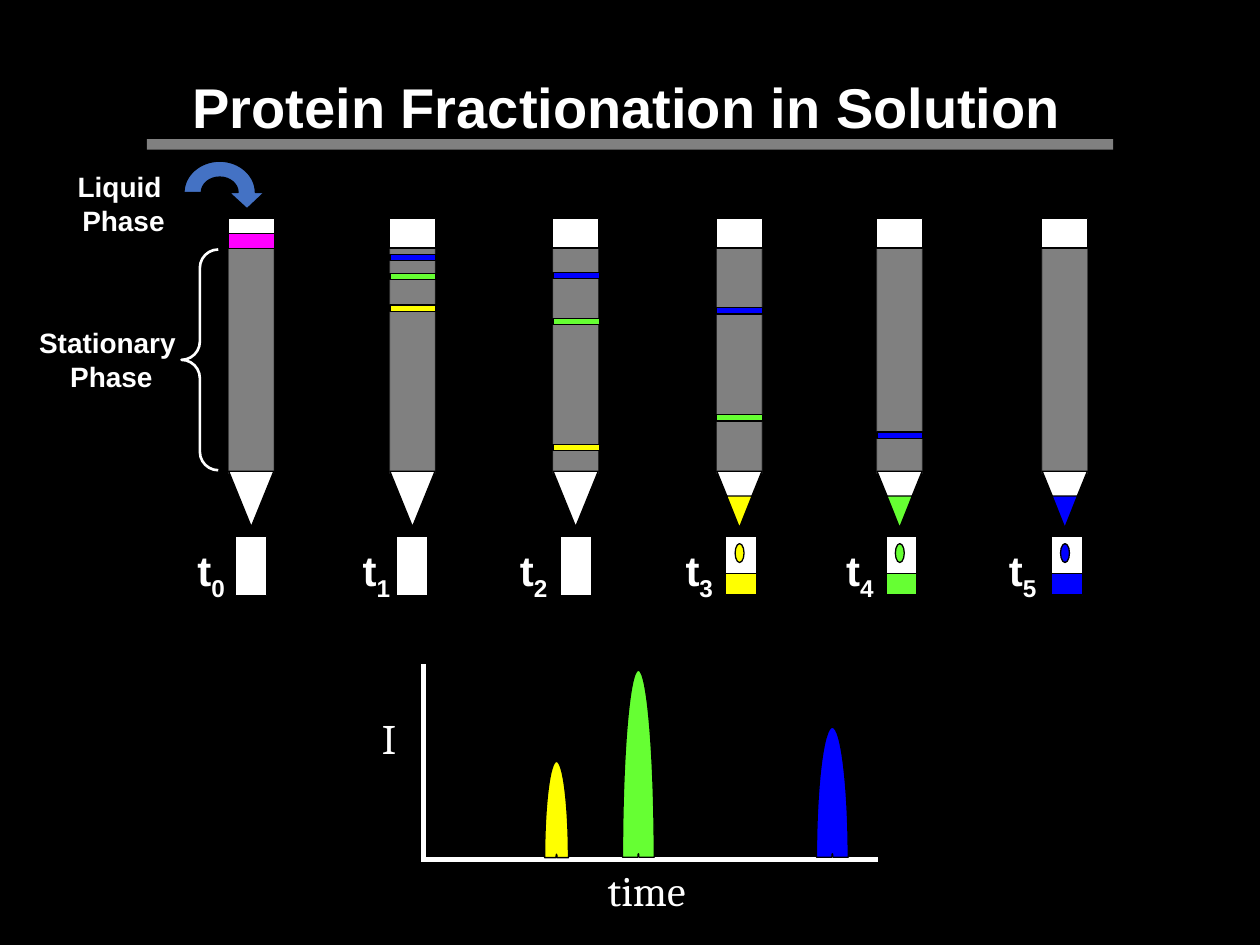
from lxml import etree
from pptx import Presentation
from pptx.dml.color import RGBColor
from pptx.enum.shapes import MSO_CONNECTOR, MSO_SHAPE
from pptx.enum.text import MSO_ANCHOR, MSO_AUTO_SIZE, PP_ALIGN
from pptx.oxml.ns import qn
from pptx.util import Cm, Pt

RECTANGLE = MSO_SHAPE.RECTANGLE
TRIANGLE = MSO_SHAPE.ISOSCELES_TRIANGLE
ELLIPSE = MSO_SHAPE.OVAL
BRACE = MSO_SHAPE.LEFT_BRACE
STRAIGHT = MSO_CONNECTOR.STRAIGHT
LEFT, CENTER = PP_ALIGN.LEFT, PP_ALIGN.CENTER

WHITE, BLACK, MAGENTA = "FFFFFF", "000000", "FF00FF"
YELLOW, GREEN, BLUE, ARROW_BLUE = "FFFF00", "66FF33", "0000FF", "4472C4"

TITLE_FONT = {"name": "Arial", "size": Pt(32), "bold": True}
PHASE_FONT = {"name": "Arial", "size": Pt(16), "bold": True}
TIME_FONT = {"name": "Arial", "size": Pt(24), "bold": True}
AXIS_FONT = {"name": "Cambria", "size": Pt(24), "bold": False}
FRAME_FORMAT = {
    "word_wrap": False,
    "auto_size": MSO_AUTO_SIZE.SHAPE_TO_FIT_TEXT,
    "vertical_anchor": MSO_ANCHOR.TOP,
    "margin_left": Cm(0.25),
    "margin_right": Cm(0.25),
    "margin_top": Cm(0.13),
    "margin_bottom": Cm(0.13),
}

CURVE_RATIO = 0.55
COLUMN_WIDTH = 0.93
BAND_HEIGHT = 0.13
COLUMNS = [
    (4.6, 3.73, [], None),
    (7.85, 7.06, [(5.13, BLUE), (5.51, GREEN), (6.15, YELLOW)], None),
    (11.14, 10.23, [(5.49, BLUE), (6.42, GREEN), (8.96, YELLOW)], None),
    (14.44, 13.57, [(6.2, BLUE), (8.36, GREEN)], YELLOW),
    (17.67, 16.81, [(8.71, BLUE)], GREEN),
    (21, 20.09, [], BLUE),
]
PEAKS = [
    (10.98, 15.35, 0.48, 17.29, YELLOW),
    (12.55, 13.51, 0.64, 17.28, GREEN),
    (16.46, 14.66, 0.64, 17.28, BLUE),
]


def set_format(target, values):
    for name, value in values.items():
        setattr(target, name, value)


def paint(fill, color, alpha=None):
    fill.solid()
    fill.fore_color.rgb = RGBColor.from_string(color)
    if alpha is not None:
        for node in fill._xPr.iter(qn("a:srgbClr")):
            etree.SubElement(node, qn("a:alpha")).set("val", str(alpha * 1000))


def outline(shape, color=BLACK, width=0.75):
    shape.shadow.inherit = False
    paint(shape.line.fill, color)
    shape.line.width = Pt(width)


def add_block(slide, kind, box, color, alpha=None):
    shape = slide.shapes.add_shape(kind, *map(Cm, box))
    outline(shape)
    paint(shape.fill, color, alpha)
    return shape


def add_cone(slide, box, color):
    add_block(slide, TRIANGLE, box, color).rotation = 180


def add_outline(slide, start, segments, size, color):
    points = [(Cm(x), Cm(y)) for segment in segments for x, y in segment]
    builder = slide.shapes.build_freeform(*map(Cm, start))
    builder.add_line_segments(points, close=True)
    shape = builder.convert_to_shape()
    outline(shape)
    paint(shape.fill, color)
    shape.width, shape.height = map(Cm, size)
    outline_path = next(shape._element.iter(qn("a:path")))
    outline_path.set("w", str(shape.width))
    outline_path.set("h", str(shape.height))
    nodes = iter(outline_path.findall(qn("a:lnTo")))
    for segment in segments:
        group = [next(nodes) for _ in segment]
        if len(group) == 3:
            curve = etree.SubElement(outline_path, qn("a:cubicBezTo"))
            group[0].addprevious(curve)
            for node in group:
                curve.append(node[0])
                outline_path.remove(node)


def half_ellipse(center, base, radius_x, radius_y, side):
    start, end = center + side * radius_x, center - side * radius_x
    top, handle_y = base - radius_y, base - CURVE_RATIO * radius_y
    handle_x = side * CURVE_RATIO * radius_x
    return [
        [(start, handle_y), (center + handle_x, top), (center, top)],
        [(center - handle_x, top), (end, handle_y), (end, base)],
    ]


def add_peak(slide, left, top, width, base, color):
    radius, height = width / 2, base - top
    center = left + radius
    segments = half_ellipse(center, base, 0.01, 0.07, -1)
    segments += [[(left + width, base)]]
    segments += half_ellipse(center, base, radius, height, 1)
    add_outline(slide, (center - 0.01, base), segments, (width, 2 * height), color)


def add_flow_arrow(slide):
    center, base = 4.43, 3.88
    segments = half_ellipse(center, base, 0.37, 0.31, 1)
    segments += [[(3.71, base)]]
    segments += half_ellipse(center, base, 0.72, 0.63, -1)
    segments += [[(5.33, base)], [(4.98, 4.21)], [(4.62, base)]]
    add_outline(slide, (center + 0.37, base), segments, (1.45, 1.27), ARROW_BLUE)


def add_line(slide, start, end, width, alpha=None):
    line = slide.shapes.add_connector(STRAIGHT, *map(Cm, (*start, *end)))
    paint(line.line.fill, WHITE, alpha)
    line.line.width = Pt(width)
    etree.SubElement(line._element.spPr, qn("a:effectLst"))


def add_run(paragraph, text, font):
    run = paragraph.add_run()
    run.text = text
    set_format(run.font, font)
    paint(run.font.fill, WHITE)
    return run


def write_lines(shape, lines, font, alignment):
    frame = shape.text_frame
    set_format(frame, FRAME_FORMAT)
    for index, text in enumerate(lines):
        paragraph = frame.add_paragraph() if index else frame.paragraphs[0]
        paragraph.alignment = alignment
        add_run(paragraph, text, font)
    return paragraph


def add_text(slide, box, lines, font, alignment=LEFT):
    shape = slide.shapes.add_textbox(*map(Cm, box))
    return write_lines(shape, lines, font, alignment)


def add_title(slide, box, text):
    title = slide.shapes.title
    set_format(title, dict(zip(("left", "top", "width", "height"), map(Cm, box))))
    write_lines(title, [text], TITLE_FONT, LEFT)


def add_column(slide, number, left, label_left, bands, fraction):
    add_block(slide, RECTANGLE, (left, 5, COLUMN_WIDTH, 4.55), WHITE, 50)
    add_cone(slide, (left + 0.01, 9.5, 0.91, 1.12), WHITE)
    add_block(slide, RECTANGLE, (left, 4.4, COLUMN_WIDTH, 0.6), WHITE)
    for top, color in bands:
        add_block(slide, RECTANGLE, (left + 0.01, top, COLUMN_WIDTH, BAND_HEIGHT), color)
    vial_left = left + (0.19 if fraction else 0.15)
    add_block(slide, RECTANGLE, (vial_left, 10.82, 0.63, 1.19), WHITE)
    if fraction:
        add_cone(slide, (left + 0.21, 10, 0.51, 0.64), fraction)
        add_block(slide, RECTANGLE, (vial_left, 11.56, 0.63, 0.43), fraction)
        add_block(slide, ELLIPSE, (left + 0.38, 10.96, 0.18, 0.38), fraction)
    paragraph = add_text(slide, (label_left, 10.85, 1.12, 1.27), ["t"], TIME_FONT)
    subscript = add_run(paragraph, str(number), TIME_FONT)
    subscript._r.get_or_add_rPr().set("baseline", "-25000")


def add_chromatogram(slide):
    add_line(slide, (8.54, 13.39), (8.54, 17.37), 3)
    add_line(slide, (8.54, 17.32), (17.7, 17.32), 3)
    add_text(slide, (7.45, 14.24, 0.79, 1.27), ["I"], AXIS_FONT)
    add_text(slide, (12, 17.3, 2.18, 1.27), ["time"], AXIS_FONT)
    for peak in PEAKS:
        add_peak(slide, *peak)


def add_phase_labels(slide):
    brace = slide.shapes.add_shape(BRACE, *map(Cm, (3.66, 5.03, 0.74, 4.45)))
    brace.adjustments[0] = 0.5
    brace.fill.background()
    outline(brace, WHITE, 1.5)
    add_text(slide, (0.53, 6.44, 3.43, 1.63), ["Stationary ", "Phase"], PHASE_FONT, CENTER)
    add_text(slide, (1.31, 3.29, 2.36, 1.63), ["Liquid ", "Phase"], PHASE_FONT, CENTER)


def main():
    presentation = Presentation()
    presentation.slide_width = Cm(25.4)
    presentation.slide_height = Cm(19.05)
    slide = presentation.slides.add_slide(presentation.slide_layouts[5])
    paint(slide.background.fill, BLACK)
    add_title(slide, (3.63, 1.34, 18.16, 1.63), "Protein Fractionation in Solution")
    add_chromatogram(slide)
    for number, column in enumerate(COLUMNS):
        add_column(slide, number, *column)
    add_block(slide, RECTANGLE, (COLUMNS[0][0], 4.71, COLUMN_WIDTH, 0.3), MAGENTA)
    add_phase_labels(slide)
    add_line(slide, (2.96, 2.91), (22.44, 2.91), 6, 50)
    add_flow_arrow(slide)
    presentation.save("out.pptx")


if __name__ == "__main__":
    main()
